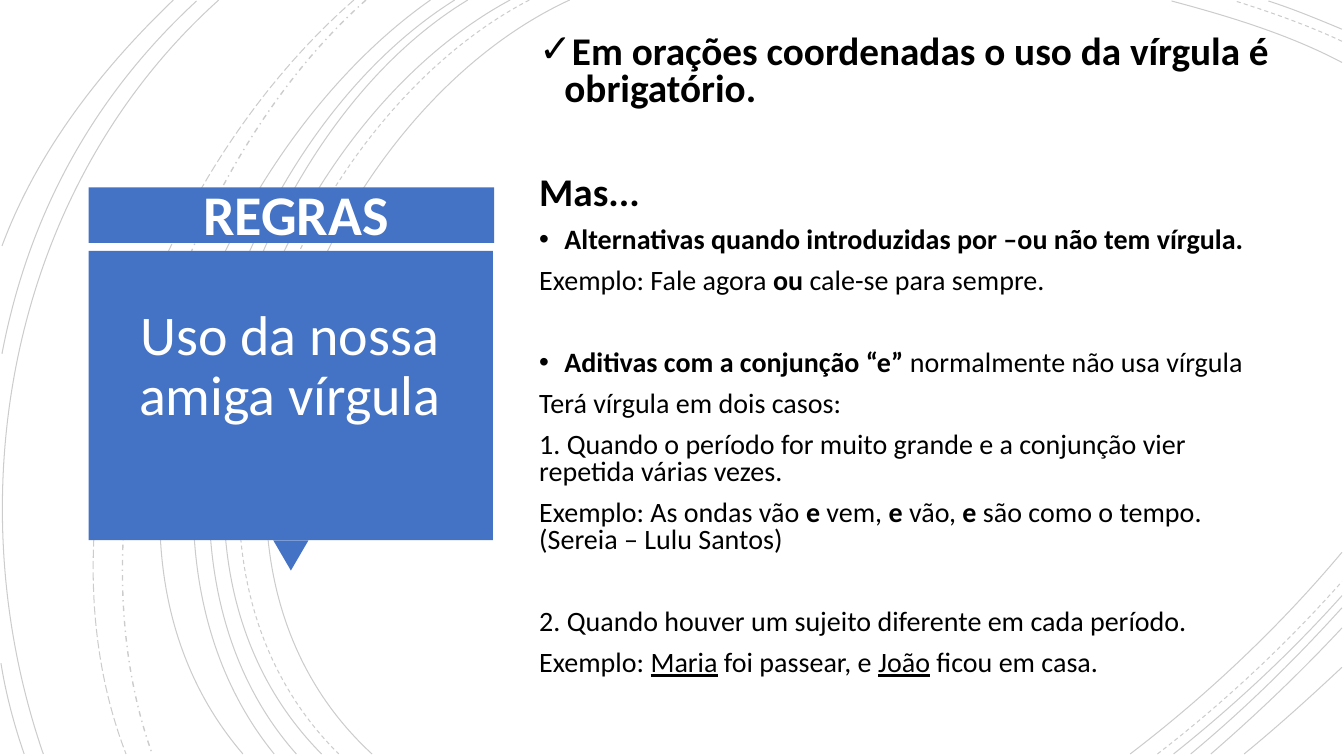
"""Build the slide about the rules for using the comma."""
from pptx import Presentation
from pptx import util as u
from pptx.dml import color
from pptx.enum import dml, shapes, text
from pptx.oxml import ns
from lxml import etree

COLUMNS, ROWS = 13.33, 7.5
BOTTOM, RIGHT = 7.48, 13.31
FONT = "Calibri"
COLOURS = {"panel": "4472C4", "light": "FFFFFF", "dark": "000000"}
SOLID, DASH = dml.MSO_LINE.SOLID, dml.MSO_LINE.DASH
DASH_DOT, LONG_DASH = dml.MSO_LINE.DASH_DOT, dml.MSO_LINE.LONG_DASH

LEFT_ARCS = [
    (5.65, (3.15, 1.15), (1.43, 5.4), 3.69, SOLID),
    (5.25, (2.85, 1.25), (1.23, 5.37), 3.36, DASH),
    (5.06, (2.7, 1.27), (1.1, 5.37), 3.19, SOLID),
    (4.64, (2.44, 1.33), (1.1, 5.41), 2.94, SOLID),
    (4.51, (2.31, 1.38), (0.97, 5.33), 2.72, SOLID),
    (4.27, (2.17, 1.47), (0.53, 5.29), 2.41, SOLID),
    (3.63, (1.76, 1.66), (0.65, 5.09), 1.51, DASH_DOT),
    (3.51, (1.57, 1.69), (0.29, 4.99), 1.25, LONG_DASH),
    (2.17, (0.11, 1.85), (-0.46, 4.9), 0.43, SOLID),
]
TOP_ARCS = [
    (0.62, (12.78, 0.34), (12.18, 0.16), 11.62, SOLID),
    (0.41, (12.97, 0.25), (12.6, 0.12), 12.25, DASH),
    (0.29, (13.07, 0.19), (12.83, 0.09), 12.58, SOLID),
]
BOTTOM_ARCS = [
    (11.21, (11.97, 6.9), (12.69, 6.22), 5.48, SOLID),
    (11.48, (12.13, 6.98), (12.75, 6.4), 5.77, DASH),
    (11.64, (12.23, 7.01), (12.8, 6.48), 5.91, SOLID),
    (11.81, (12.34, 7.04), (12.84, 6.55), 6.03, SOLID),
    (12.01, (12.46, 7.09), (12.9, 6.67), 6.23, SOLID),
    (12.34, (12.67, 7.21), (12.99, 6.92), 6.62, SOLID),
]
EDGE_ARCS = [
    ((1.95, 0.01), (0.92, 0.96), (0.28, 2.14), (0.02, 3.51)),
    ((0.01, 6.58), (0.06, 6.89), (0.14, 7.19), (0.24, BOTTOM)),
    ((1.72, 0), (1, 0.69), (0.37, 1.5), (0.02, 2.44)),
]

HEADING, BODY = 28, 20
GAP, HEADING_GAP, BODY_GAP = 10, 47.3, 39.5
RULES = [
    ("*Em orações coordenadas o uso da vírgula é obrigatório.*", HEADING, GAP, "✓"),
    ("*Mas...*", HEADING, HEADING_GAP, None),
    ("*Alternativas quando introduzidas por –ou não tem vírgula.*", BODY, GAP, "•"),
    ("Exemplo: Fale agora *ou* cale-se para sempre.", BODY, GAP, None),
    ("*Aditivas com a conjunção “e” *normalmente não usa vírgula", BODY, BODY_GAP, "•"),
    ("Terá vírgula em dois casos:", BODY, GAP, None),
    ("1. Quando o período for muito grande e a conjunção vier repetida várias vezes.",
     BODY, GAP, None),
    ("Exemplo: As ondas vão *e* vem, *e* vão, *e* são como o tempo.\n(Sereia – Lulu Santos)",
     BODY, GAP, None),
    ("2. Quando houver um sujeito diferente em cada período.", BODY, BODY_GAP, None),
    ("Exemplo: _Maria_ foi passear, e _João_ ficou em casa.", BODY, GAP, None),
]


def colour(name):
    """Return the named colour."""
    return color.RGBColor.from_string(COLOURS[name])


def place(*cells):
    """Turn grid columns and rows into slide lengths."""
    return [u.Inches(cell) for cell in cells]


def add_arc(slide, points, dash=SOLID):
    """Draw a faint cubic curve through a start, two controls and an end."""
    start, *rest = [place(*point) for point in points]
    builder = slide.shapes.build_freeform(*start, scale=1.0)
    builder.add_line_segments(rest, close=False)
    shape = builder.convert_to_shape()
    shape.shadow.inherit = False
    shape.fill.background()
    shape.line.color.rgb = colour("dark")
    shape.line.width = u.Pt(1 if dash == DASH_DOT else 0.75)
    shape.line.dash_style = dash
    solid = shape.line.fill._xPr.find(".//" + ns.qn("a:srgbClr"))
    etree.SubElement(solid, ns.qn("a:alpha"), val="20000")
    outline = shape._element.find(".//" + ns.qn("a:path"))
    curve = etree.SubElement(outline, ns.qn("a:cubicBezTo"))
    for segment in outline.findall(ns.qn("a:lnTo")):
        curve.append(segment[0])
        outline.remove(segment)


def add_arcs(slide):
    """Draw every family of background arcs."""
    for top, first, second, bottom, dash in LEFT_ARCS:
        add_arc(slide, [(top, 0), first, second, (bottom, BOTTOM)], dash)
    for side, first, second, top, dash in TOP_ARCS:
        add_arc(slide, [(RIGHT, side), first, second, (top, 0.01)], dash)
    for bottom, first, second, side, dash in BOTTOM_ARCS:
        add_arc(slide, [(bottom, BOTTOM), first, second, (RIGHT, side)], dash)
    for points in EDGE_ARCS:
        add_arc(slide, points)


def add_panel(slide, kind, cells, rotation=0):
    """Add a plain blue shape."""
    shape = slide.shapes.add_shape(kind, *place(*cells))
    shape.shadow.inherit = False
    shape.rotation = rotation
    shape.fill.solid()
    shape.fill.fore_color.rgb = colour("panel")
    shape.line.fill.background()


def add_text_frame(slide, cells, anchor):
    """Add a wrapping text box and return its frame."""
    frame = slide.shapes.add_textbox(*place(*cells)).text_frame
    frame.word_wrap = True
    frame.vertical_anchor = anchor
    return frame


def format_run(run, size, name, bold=False, underline=False):
    """Set the font of a run."""
    run.font.name = FONT
    run.font.size = u.Pt(size)
    run.font.color.rgb = colour(name)
    run.font.bold = bold
    run.font.underline = underline


def add_label(slide, cells, words, bold):
    """Add large centred white text."""
    frame = add_text_frame(slide, cells, text.MSO_ANCHOR.MIDDLE)
    frame.text = words
    paragraph = frame.paragraphs[0]
    paragraph.alignment = text.PP_ALIGN.CENTER
    paragraph.line_spacing = 0.9
    format_run(paragraph.runs[0], 40, "light", bold)


def add_bullet(paragraph, mark):
    """Give a paragraph a hanging bullet."""
    properties = paragraph._p.get_or_add_pPr()
    properties.set("marL", str(u.Inches(0.25)))
    properties.set("indent", str(-u.Inches(0.25)))
    etree.SubElement(properties, ns.qn("a:buFont"), typeface="Arial")
    etree.SubElement(properties, ns.qn("a:buChar"), char=mark)


def write_rule(paragraph, words, size, gap, mark):
    """Write a rule, with *bold* and _underlined_ parts."""
    paragraph.line_spacing = 0.8
    paragraph.space_before = u.Pt(gap)
    if mark:
        add_bullet(paragraph, mark)
    for number, line in enumerate(words.split("\n")):
        if number:
            paragraph.add_line_break()
        for strong, part in enumerate(line.split("*")):
            for under, piece in enumerate(part.split("_")):
                if piece:
                    run = paragraph.add_run()
                    run.text = piece
                    format_run(run, size, "dark", strong % 2 == 1, under % 2 == 1)


def add_rules(slide, cells):
    """Add the list of rules."""
    frame = add_text_frame(slide, cells, text.MSO_ANCHOR.TOP)
    for number, rule in enumerate(RULES):
        paragraph = frame.add_paragraph() if number else frame.paragraphs[0]
        write_rule(paragraph, *rule)


def main():
    """Build and save the slide."""
    presentation = Presentation()
    presentation.slide_width, presentation.slide_height = place(COLUMNS, ROWS)
    slide = presentation.slides.add_slide(presentation.slide_layouts[6])
    add_arcs(slide)
    add_panel(slide, shapes.MSO_SHAPE.RECTANGLE, (0.88, 1.86, 4.02, 0.55))
    add_panel(slide, shapes.MSO_SHAPE.ISOSCELES_TRIANGLE, (2.71, 5.36, 0.35, 0.3), 180)
    add_panel(slide, shapes.MSO_SHAPE.RECTANGLE, (0.88, 2.49, 4.01, 2.87))
    add_label(slide, (0.99, 2.64, 3.77, 2.01), "Uso da nossa amiga vírgula", False)
    add_rules(slide, (5.25, 0.3, 7.43, 6.9))
    add_label(slide, (1.05, 1.92, 3.77, 0.48), "REGRAS", True)
    presentation.save("out.pptx")


if __name__ == "__main__":
    main()
